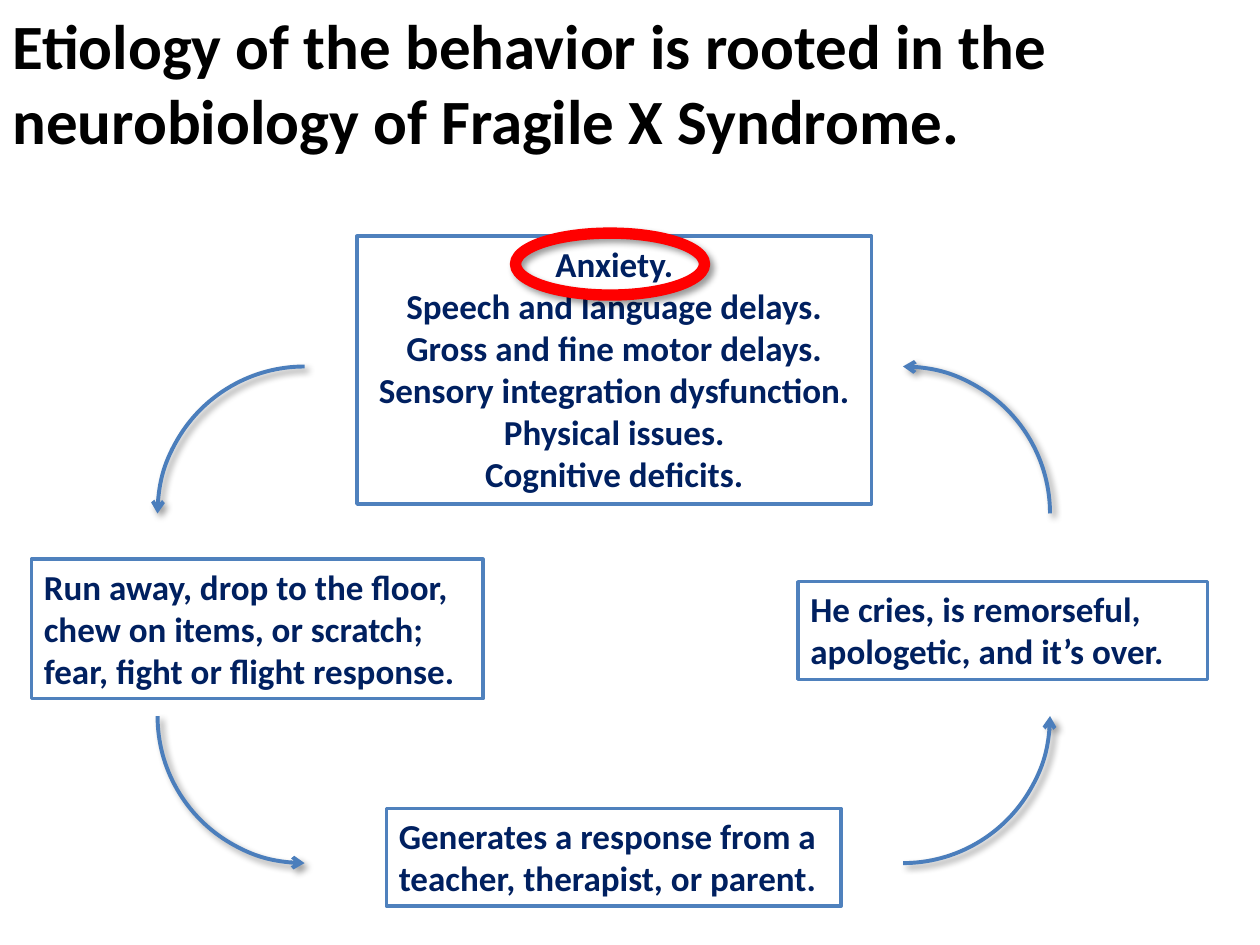
from lxml.etree import SubElement
from pptx import Presentation
from pptx.dml.color import RGBColor
from pptx.enum.shapes import MSO_SHAPE as Shape
from pptx.enum.text import MSO_ANCHOR as Anchor, MSO_AUTO_SIZE as AutoSize, PP_ALIGN as Align
from pptx.oxml.ns import qn
from pptx.util import Inches, Pt

BLACK = RGBColor(0x00, 0x00, 0x00)
NAVY = RGBColor(0x00, 0x20, 0x60)
BOX_BLUE = RGBColor(0x4F, 0x81, 0xBD)
ARROW_BLUE = RGBColor(0x4B, 0x7E, 0xBC)
RED = RGBColor(0xFF, 0x00, 0x00)

SLIDE_W, SLIDE_H = Inches(10), Inches(7.5)
COLS, ROWS = 120, 90

ISSUES = ["Anxiety.", "Speech and language delays.", "Gross and fine motor delays.",
          "Sensory integration dysfunction.", "Physical issues.", "Cognitive deficits."]
BEHAVIOR = ["Run away, drop to the floor,", "chew on items, or scratch;",
            "fear, fight or flight response."]
RESPONSE = ["Generates a response from a teacher, therapist, or parent."]
REMORSE = ["He cries, is remorseful, apologetic, and it’s over."]
TITLE = ["Etiology of the behavior is rooted in the neurobiology of Fragile X Syndrome."]

ARC_SIZE = 28
ARC_LEFT, ARC_RIGHT = 15, 72
ARC_TOP, ARC_BOTTOM = 34.9, 54.2


def grid(col, row, cols, rows):
    """Turn grid columns and rows into left, top, width, height."""
    cw, rh = SLIDE_W / COLS, SLIDE_H / ROWS
    return [round(v) for v in (col * cw, row * rh, cols * cw, rows * rh)]


def write(sp, lines, size=20, color=NAVY, align=Align.LEFT):
    tf = sp.text_frame
    tf.word_wrap = True
    tf.auto_size = AutoSize.SHAPE_TO_FIT_TEXT
    tf.vertical_anchor = Anchor.TOP
    for i, line in enumerate(lines):
        p = tf.add_paragraph() if i else tf.paragraphs[0]
        p.alignment = align
        r = p.add_run()
        r.text = line
        r.font.name, r.font.size, r.font.bold = "Calibri", Pt(size), True
        r.font.color.rgb = color


def add_outline(s, kind, place, color, width):
    sp = s.shapes.add_shape(kind, *grid(*place))
    sp.shadow.inherit = False
    sp.fill.background()
    sp.line.color.rgb = color
    sp.line.width = Pt(width)
    return sp


def add_box(s, place, lines, **fmt):
    write(add_outline(s, Shape.RECTANGLE, place, BOX_BLUE, 2), lines, **fmt)


def add_shadow(sp):
    effects = sp.element.spPr.find(qn("a:effectLst"))
    shadow = SubElement(effects, qn("a:outerShdw"), blurRad=str(Pt(4)), dist=str(Pt(3)),
                        dir=str(45 * 60000), rotWithShape="0")
    color = SubElement(shadow, qn("a:srgbClr"), val="000000")
    SubElement(color, qn("a:alpha"), val="40000")


def add_cycle_arrow(s, col, row, rotation):
    """Draw a quarter circle with its arrowhead at the start of the arc."""
    sp = add_outline(s, Shape.ARC, (col, row, ARC_SIZE, ARC_SIZE), ARROW_BLUE, 2.25)
    sp.rotation = rotation
    SubElement(sp.element.spPr.find(qn("a:ln")), qn("a:headEnd"), type="arrow")
    add_shadow(sp)


def main():
    prs = Presentation()
    prs.slide_width, prs.slide_height = SLIDE_W, SLIDE_H
    s = prs.slides.add_slide(prs.slide_layouts[6])

    add_box(s, (34, 22.5, 49, 25.5), ISSUES, align=Align.CENTER)
    add_box(s, (3, 53.25, 43, 13.3), BEHAVIOR)
    add_box(s, (36.8, 77, 43.3, 9.3), RESPONSE)
    add_box(s, (76, 55.4, 39, 9.3), REMORSE)

    add_cycle_arrow(s, ARC_LEFT, ARC_TOP, 270)
    add_cycle_arrow(s, ARC_LEFT, ARC_BOTTOM, 180)
    add_cycle_arrow(s, ARC_RIGHT, ARC_TOP, 0)
    add_cycle_arrow(s, ARC_RIGHT, ARC_BOTTOM, 90)

    title = s.shapes.add_textbox(*grid(0, 0, COLS, 15.7))
    write(title, TITLE, size=36, color=BLACK)
    add_shadow(add_outline(s, Shape.OVAL, (49.1, 22.2, 18, 5.9), RED, 6.5))
    prs.save("out.pptx")


if __name__ == "__main__":
    main()
